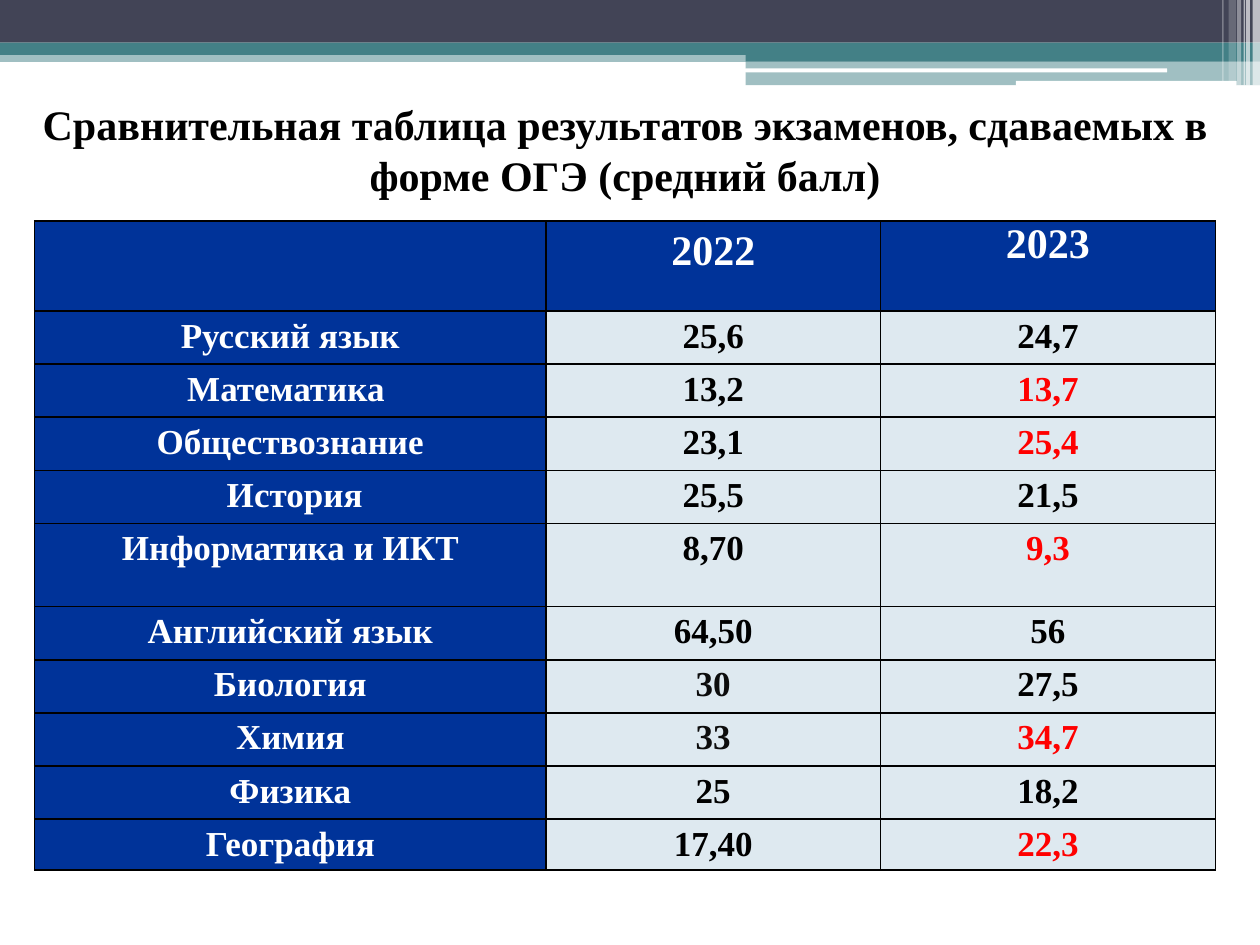
from lxml import etree
from pptx import Presentation
from pptx.dml.color import RGBColor
from pptx.enum.shapes import MSO_SHAPE
from pptx.enum.text import MSO_ANCHOR, PP_ALIGN
from pptx.oxml.ns import qn
from pptx.util import Cm, Pt

RECT, ROUNDED = MSO_SHAPE.RECTANGLE, MSO_SHAPE.ROUNDED_RECTANGLE
CENTER, MIDDLE = PP_ALIGN.CENTER, MSO_ANCHOR.MIDDLE
FONT = "Times New Roman"
TITLE_ONLY = 5

WHITE = RGBColor(0xFF, 0xFF, 0xFF)
BLACK = RGBColor(0x00, 0x00, 0x00)
SOFT_BLACK = RGBColor(0x0D, 0x0D, 0x0D)
RED = RGBColor(0xFF, 0x00, 0x00)
SLATE = RGBColor(0x42, 0x44, 0x56)
TEAL = RGBColor(0x43, 0x80, 0x86)
NAVY = RGBColor(0x00, 0x33, 0x99)
PALE = RGBColor(0xDE, 0xE9, 0xF0)

# Left, top, width, height in cm; shape, colour, opacity in percent
BANDS = [
    (0, 1.02, 25.4, 0.23, RECT, TEAL, 50),
    (0, 0, 25.4, 0.86, RECT, SLATE, 100),
    (0, 0.86, 25.4, 0.25, RECT, TEAL, 100),
    (15.03, 0.99, 10.37, 0.25, RECT, TEAL, 100),
    (15.03, 1.24, 10.37, 0.48, RECT, TEAL, 50),
    (15.02, 1.38, 8.51, 0.08, ROUNDED, WHITE, 100),
    (20.48, 1.63, 4.45, 0.1, ROUNDED, WHITE, 100),
]
# Left, width, height in cm; opacity in percent
STRIPES = [
    (25.25, 0.15, 1.73, 65),
    (25.12, 0.08, 1.73, 65),
    (25.07, 0.03, 1.73, 60),
    (24.94, 0.08, 1.73, 40),
    (24.77, 0.15, 1.63, 20),
    (24.64, 0.03, 1.63, 30),
]

YEARS = ["", "2022", "2023"]
RESULTS = [
    ("Русский язык", "25,6", "24,7"),
    ("Математика ", "13,2", "13,7"),
    ("Обществознание", "23,1", "25,4"),
    (" История", "25,5", "21,5"),
    ("Информатика и ИКТ", "8,70", "9,3"),
    ("Английский язык", "64,50", "56"),
    ("Биология", "30", "27,5"),
    ("Химия", "33", "34,7"),
    ("Физика", "25", "18,2"),
    ("География", "17,40", "22,3"),
]
SOFT_SUBJECTS = ("Биология", "Химия")
COL_SHARES = [0.433, 0.2835, 0.2835]
ROW_HEIGHTS = [1.81] + [1.07] * 4 + [1.68] + [1.07] * 4 + [1.03]


def set_opacity(sp, percent):
    color = sp.fill._xPr.find(qn("a:solidFill"))[0]
    etree.SubElement(color, qn("a:alpha"), val=str(percent * 1000))


def add_block(slide, x, y, w, h, kind, color, opacity):
    sp = slide.shapes.add_shape(kind, Cm(x), Cm(y), Cm(w), Cm(h))
    sp.shadow.inherit = False
    sp.fill.solid()
    sp.fill.fore_color.rgb = color
    sp.line.fill.background()
    if opacity < 100:
        set_opacity(sp, opacity)


def add_header(slide, left, top):
    for x, y, *rest in BANDS:
        add_block(slide, left + x, top + y, *rest)
    for x, w, h, opacity in STRIPES:
        add_block(slide, left + x, top, w, h, RECT, WHITE, opacity)


def style_paragraph(p, size, color):
    p.alignment = CENTER
    p.font.name = FONT
    p.font.size = Pt(size)
    p.font.bold = True
    p.font.color.rgb = color


def add_title(slide, left, top, width, height):
    title = slide.shapes.title
    title.left, title.top = Cm(left), Cm(top)
    title.width, title.height = Cm(width), Cm(height)
    title.fill.solid()
    title.fill.fore_color.rgb = WHITE
    tf = title.text_frame
    tf.word_wrap = True
    tf.vertical_anchor = MIDDLE
    tf.text = ("Сравнительная таблица результатов экзаменов, "
               "сдаваемых в форме ОГЭ (средний балл)")
    style_paragraph(tf.paragraphs[0], 24, BLACK)


def set_borders(cell):
    tc_pr = cell._tc.get_or_add_tcPr()
    for side in ("a:lnL", "a:lnR", "a:lnT", "a:lnB"):
        ln = etree.SubElement(tc_pr, qn(side), w=str(Pt(1)))
        fill = etree.SubElement(ln, qn("a:solidFill"))
        etree.SubElement(fill, qn("a:srgbClr"), val=str(BLACK))


def fill_cell(cell, text, size, color, background, spacing=1.15):
    set_borders(cell)
    cell.fill.solid()
    cell.fill.fore_color.rgb = background
    cell.margin_left = cell.margin_right = Cm(0.18)
    cell.margin_top = cell.margin_bottom = 0
    cell.text = text
    p = cell.text_frame.paragraphs[0]
    style_paragraph(p, size, color)
    p.line_spacing = spacing


def score(text):
    return float(text.replace(",", "."))


def add_results(slide, left, top, width):
    frame = slide.shapes.add_table(len(ROW_HEIGHTS), len(YEARS), Cm(left), Cm(top),
                                   Cm(width), Cm(sum(ROW_HEIGHTS)))
    table = frame.table
    for column, share in zip(table.columns, COL_SHARES):
        column.width = Cm(width * share)
    for row, height in zip(table.rows, ROW_HEIGHTS):
        row.height = Cm(height)

    # Header row
    for i, (year, spacing) in enumerate(zip(YEARS, (1.15, 1.15, 1.0))):
        fill_cell(table.cell(0, i), year, 24, WHITE, NAVY, spacing)

    # Subjects; a score that rose is red
    for i, (subject, before, after) in enumerate(RESULTS, start=1):
        before_color = SOFT_BLACK if subject in SOFT_SUBJECTS else BLACK
        after_color = RED if score(after) > score(before) else BLACK
        fill_cell(table.cell(i, 0), subject, 20, WHITE, NAVY)
        fill_cell(table.cell(i, 1), before, 20, before_color, PALE)
        fill_cell(table.cell(i, 2), after, 20, after_color, PALE)


def main():
    prs = Presentation()
    prs.slide_width, prs.slide_height = Cm(25.4), Cm(19.05)
    slide = prs.slides.add_slide(prs.slide_layouts[TITLE_ONLY])
    add_header(slide, 0, 0)
    add_title(slide, 0.3, 1.85, 24.6, 2.31)
    add_results(slide, 0.7, 4.46, 23.8)
    prs.save("out.pptx")


if __name__ == "__main__":
    main()
